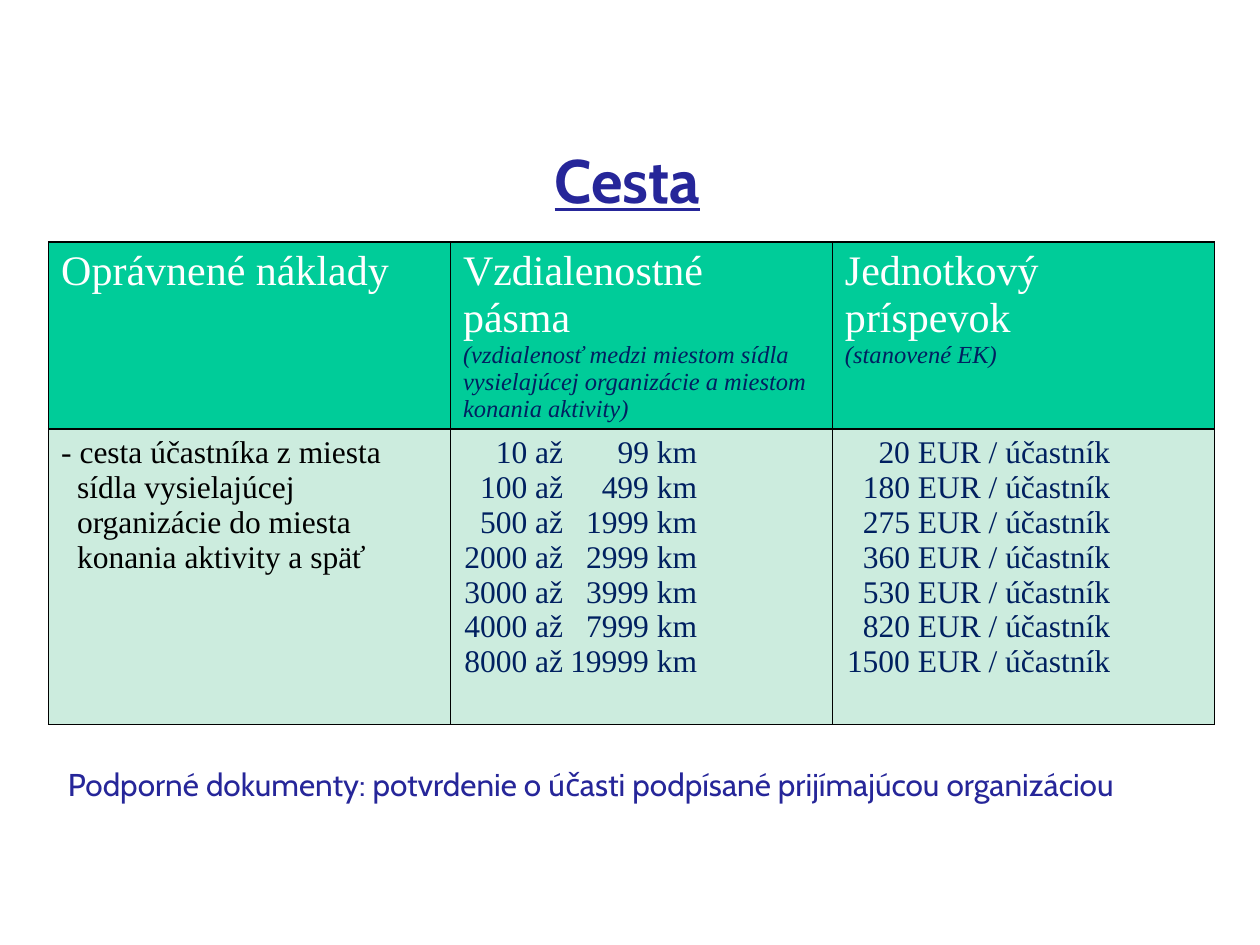
"""Build the slide on travel grants: distance bands and unit contributions."""
from lxml.etree import SubElement
from pptx import Presentation
from pptx.dml.color import RGBColor
from pptx.enum.text import MSO_ANCHOR, MSO_AUTO_SIZE, PP_ALIGN
from pptx.oxml.ns import qn
from pptx.util import Cm, Pt

TITLE = "Cesta"
FOOTNOTE = "Podporné dokumenty: potvrdenie o účasti podpísané prijímajúcou organizáciou"
HEADERS = [
    ("Oprávnené náklady",),
    ("Vzdialenostné pásma",
     "(vzdialenosť medzi miestom sídla vysielajúcej organizácie a miestom konania aktivity)"),
    ("Jednotkový príspevok", "(stanovené EK)"),
]
COSTS = ["- cesta účastníka z miesta", "sídla vysielajúcej",
         "organizácie do miesta", "konania aktivity a späť"]
BANDS = [(10, 99, 20), (100, 499, 180), (500, 1999, 275), (2000, 2999, 360),
         (3000, 3999, 530), (4000, 7999, 820), (8000, 19999, 1500)]

THEME = {
    "heading_font": "Cabin", "table_font": "Times New Roman",
    "title": 35, "header": 24, "note": 14, "body": 18,
    "violet": "262699", "navy": "002060", "white": "FFFFFF", "black": "000000",
    "header_fill": "00CC99", "body_fill": "CCECDE", "border": 1,
}
COLUMN_WIDTHS = [Cm(8.1), Cm(7.7), Cm(7.7)]
ROW_HEIGHTS = [Cm(3.77), Cm(5.96)]
HANGING = Cm(0.32)
DISTANCE_TABS = [Cm(2.02), Cm(4.72)]
GRANT_TABS = [Cm(5.35)]


def style(paragraph, size, color, font="table_font", **emphasis):
    for run in paragraph.runs:
        run.font.name = THEME[font]
        run.font.size = Pt(THEME[size])
        run.font.color.rgb = RGBColor.from_string(THEME[color])
        for name, value in emphasis.items():
            setattr(run.font, name, value)


def add_right_tabs(paragraph, stops):
    tab_list = SubElement(paragraph._p.get_or_add_pPr(), qn("a:tabLst"))
    for stop in stops:
        SubElement(tab_list, qn("a:tab"), pos=str(stop), algn="r")


def hang(paragraph, first):
    properties = paragraph._p.get_or_add_pPr()
    properties.set("marL", str(HANGING))
    properties.set("indent", str(-HANGING if first else 0))


def format_cell(cell, fill):
    properties = cell._tc.get_or_add_tcPr()
    for side in ("a:lnL", "a:lnR", "a:lnT", "a:lnB"):
        line = SubElement(properties, qn(side), w=str(Pt(THEME["border"])))
        SubElement(SubElement(line, qn("a:solidFill")), qn("a:srgbClr"), val=THEME["black"])
    cell.fill.solid()
    cell.fill.fore_color.rgb = RGBColor.from_string(THEME[fill])


def write_lines(cell, lines):
    cell.text_frame.text = "\n".join(lines)
    return cell.text_frame.paragraphs


def add_title(slide):
    title = slide.shapes.title
    title.left, title.top, title.width, title.height = Cm(1.27), Cm(2.57), Cm(22.76), Cm(2.08)
    frame = title.text_frame
    frame.text = TITLE
    frame.auto_size = MSO_AUTO_SIZE.NONE
    frame.vertical_anchor = MSO_ANCHOR.MIDDLE
    frame.paragraphs[0].alignment = PP_ALIGN.CENTER
    style(frame.paragraphs[0], "title", "violet", "heading_font", bold=True, underline=True)


def add_grants(slide):
    grants = slide.shapes.add_table(2, 3, Cm(0.98), Cm(4.88),
                                    sum(COLUMN_WIDTHS), sum(ROW_HEIGHTS)).table
    for column, width in zip(grants.columns, COLUMN_WIDTHS):
        column.width = width
    for row, height, fill in zip(grants.rows, ROW_HEIGHTS, ("header_fill", "body_fill")):
        row.height = height
        for cell in row.cells:
            format_cell(cell, fill)

    for column, lines in enumerate(HEADERS):
        heading, *notes = write_lines(grants.cell(0, column), lines)
        style(heading, "header", "white", bold=False)
        for note in notes:
            style(note, "note", "navy", bold=False, italic=True)

    for index, cost in enumerate(write_lines(grants.cell(1, 0), COSTS)):
        hang(cost, index == 0)
        style(cost, "body", "black")

    distances = [f"\t{low} až\t{high} km" for low, high, _ in BANDS]
    amounts = [f"\t{amount} EUR / účastník" for _, _, amount in BANDS]
    for column, lines, stops in ((1, distances, DISTANCE_TABS), (2, amounts, GRANT_TABS)):
        for paragraph in write_lines(grants.cell(1, column), lines):
            add_right_tabs(paragraph, stops)
            style(paragraph, "body", "navy")


def add_footnote(slide):
    frame = slide.shapes.add_textbox(Cm(1.12), Cm(15.29), Cm(23.27), Cm(1.02)).text_frame
    frame.word_wrap = True
    frame.auto_size = MSO_AUTO_SIZE.SHAPE_TO_FIT_TEXT
    frame.text = FOOTNOTE
    style(frame.paragraphs[0], "body", "violet", "heading_font")


def main():
    presentation = Presentation()
    presentation.slide_width, presentation.slide_height = Cm(25.4), Cm(19.05)
    slide = presentation.slides.add_slide(presentation.slide_layouts.get_by_name("Title Only"))
    add_title(slide)
    add_grants(slide)
    add_footnote(slide)
    presentation.save("out.pptx")


if __name__ == "__main__":
    main()
